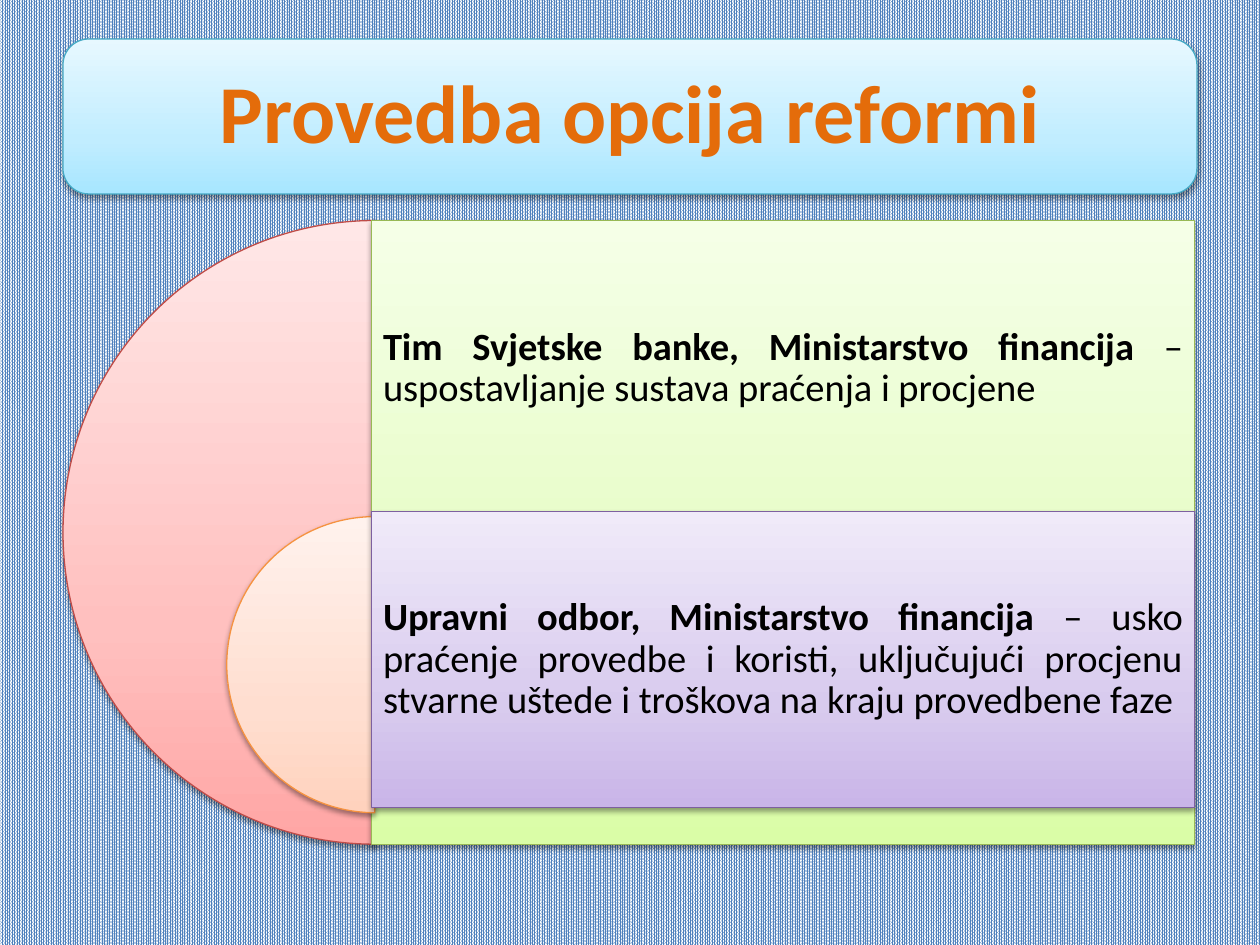
from copy import deepcopy
from lxml import etree
from pptx import Presentation
from pptx.dml.color import RGBColor
from pptx.enum import dml, shapes, text
from pptx.oxml import ns
from pptx.util import Inches, Pt

BLUE = RGBColor(0x4F, 0x81, 0xBD)
WHITE = RGBColor(0xFF, 0xFF, 0xFF)
BLACK = RGBColor(0, 0, 0)
ORANGE = RGBColor(0xE4, 0x6C, 0x0A)
AQUA = [RGBColor.from_string(c) for c in ("A7E6FF", "C1EDFF", "E7F8FF", "46AAC5")]
RED = [RGBColor.from_string(c) for c in ("FFA6A5", "FFC0BF", "FFE7E7", "BF4C48")]
GREEN = [RGBColor.from_string(c) for c in ("DAFDA7", "E4FCC2", "F5FFE7", "98B955")]
PEACH = [RGBColor.from_string(c) for c in ("FFD2BD", "FFDED0", "FFF2ED", "F69240")]
VIOLET = [RGBColor.from_string(c) for c in ("C9B5E8", "D8CBEE", "F0EAF9", "7D60A0")]

TITLE = "Provedba opcija reformi"
STEPS = [
    ("Tim Svjetske banke, Ministarstvo financija",
     " – uspostavljanje sustava praćenja i procjene",
     RED, GREEN, (0.5, 1.75, 4.95), (1.75, 4.95)),
    ("Upravni odbor, Ministarstvo financija",
     " – usko praćenje provedbe i koristi, uključujući procjenu "
     "stvarne uštede i troškova na kraju provedbene faze",
     PEACH, VIOLET, (1.8, 4.1, 2.35), (4.06, 2.35)),
]
LEFT, WIDE, ROW = 2.95, 6.53, 2.35

deck = Presentation()
deck.slide_width, deck.slide_height = Inches(10), Inches(7.5)
slide = deck.slides.add_slide(deck.slide_layouts[6])
back = slide.background.fill
back.patterned()
back.pattern = dml.MSO_PATTERN.PERCENT_90
back.fore_color.rgb, back.back_color.rgb = BLUE, WHITE


def add_block(kind, box, tones):
    block = slide.shapes.add_shape(kind, *map(Inches, box))
    fill = block.fill
    fill.gradient()
    fill.gradient_angle = 90
    stops = block._element.spPr.find(ns.qn("a:gradFill")).find(ns.qn("a:gsLst"))
    stops.insert(1, deepcopy(stops[0]))
    for stop, tone, place in zip(fill.gradient_stops, tones, (0, 0.35, 1)):
        stop.color.rgb, stop.position = tone, place
    block.line.color.rgb = tones[3]
    block.line.width = Pt(0.75)
    block.shadow.inherit = False
    glow = block._element.spPr.find(ns.qn("a:effectLst"))
    shade = etree.SubElement(glow, ns.qn("a:outerShdw"), blurRad="40000",
                             dist="20000", dir="5400000", rotWithShape="0")
    color = etree.SubElement(shade, ns.qn("a:srgbClr"), val="000000")
    etree.SubElement(color, ns.qn("a:alpha"), val="38000")
    return block


def add_label(box, runs, size, color, align, inset):
    frame = slide.shapes.add_textbox(*map(Inches, box)).text_frame
    frame.word_wrap = True
    frame.vertical_anchor = text.MSO_ANCHOR.MIDDLE
    frame.margin_left = frame.margin_right = Inches(inset)
    frame.margin_top = frame.margin_bottom = Inches(inset)
    para = frame.paragraphs[0]
    para.alignment, para.line_spacing = align, 0.9
    para.font.name, para.font.size = "Calibri", Pt(size)
    para.font.color.rgb = color
    for words, bold in runs:
        run = para.add_run()
        run.text, run.font.bold = words, bold


add_block(shapes.MSO_SHAPE.ROUNDED_RECTANGLE, (0.5, 0.31, 9, 1.23), AQUA)
add_label((0.56, 0.37, 8.88, 1.11), [(TITLE, True)], 47, ORANGE,
          text.PP_ALIGN.CENTER, 0.2)

for who, what, warm, cool, (x, y, span), (top, high) in STEPS:
    pie = add_block(shapes.MSO_SHAPE.PIE, (x, y, span, span), warm)
    pie.adjustments[0], pie.adjustments[1] = 54, 162
    add_block(shapes.MSO_SHAPE.RECTANGLE, (LEFT, top, WIDE, high), cool)
    add_label((LEFT, top, WIDE, ROW), [(who, True), (what, False)], 22, BLACK,
              text.PP_ALIGN.JUSTIFY, 0.09)

deck.save("out.pptx")
